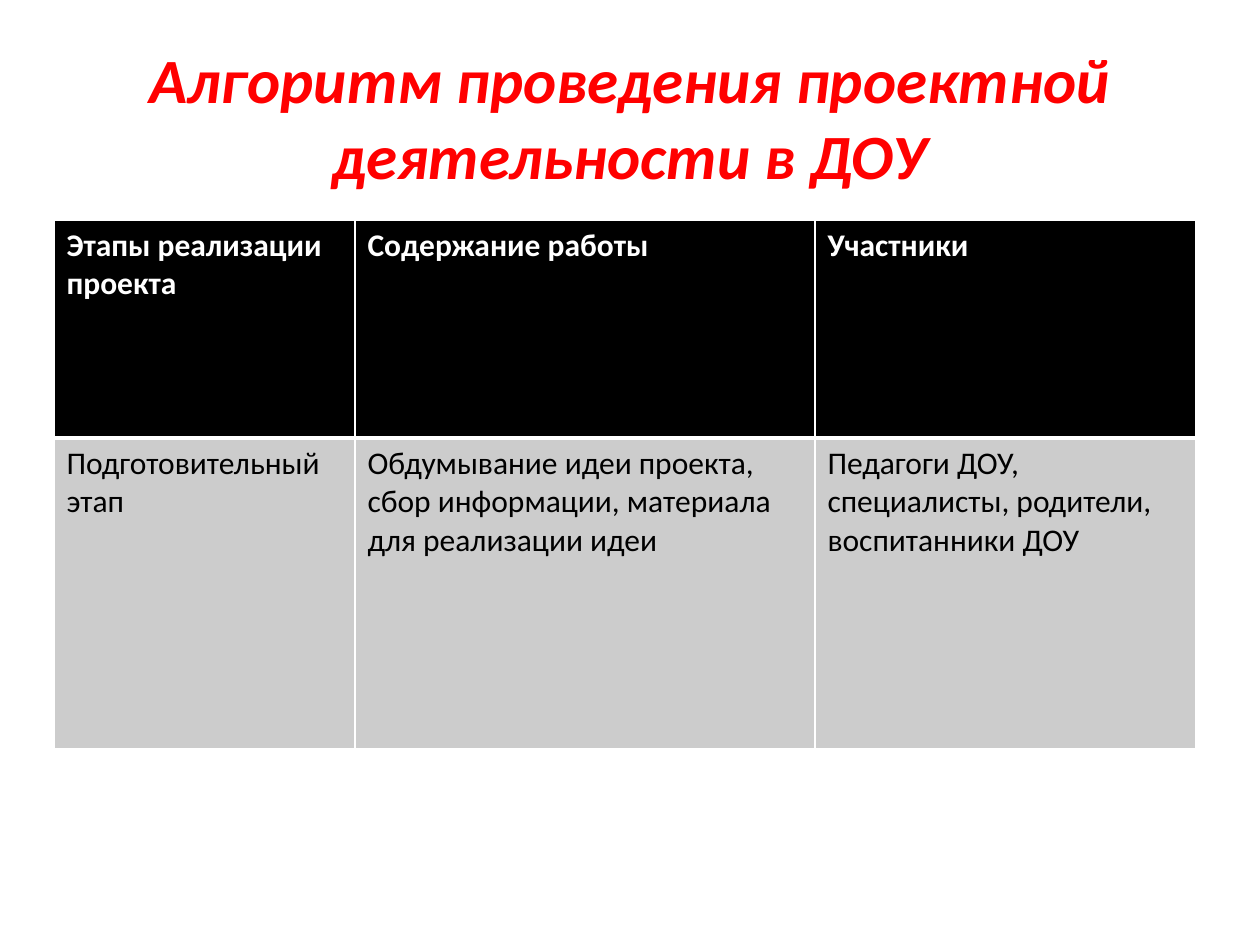
from typing import NamedTuple

from pptx import Presentation
from pptx import util as u
from pptx.dml.color import RGBColor
from pptx.enum import text
from pptx.oxml import parse_xml
from pptx.oxml.ns import nsdecls

PX = u.Inches(1) // 126
FONT = "Calibri"
RED = RGBColor(0xFF, 0x00, 0x00)
BLACK = RGBColor(0x00, 0x00, 0x00)
WHITE = RGBColor(0xFF, 0xFF, 0xFF)
GRAY = RGBColor(0xCC, 0xCC, 0xCC)

COLUMN_WIDTHS = (301, 460, 381)
TABLE_LEFT, TABLE_TOP = 54, 220


class Row(NamedTuple):
    height: int
    fill: RGBColor
    color: RGBColor
    bold: bool
    bottom_border: int
    texts: tuple[str, ...]


ROWS = (
    Row(218, BLACK, WHITE, True, 3,
        ("Этапы реализации проекта", "Содержание работы", "Участники")),
    Row(311, GRAY, BLACK, False, 1,
        ("Подготовительный этап",
         "Обдумывание идеи проекта, сбор информации, материала для реализации идеи",
         "Педагоги ДОУ, специалисты, родители, воспитанники ДОУ")),
)


def set_border(cell, side: str, points: int) -> None:
    cell._tc.get_or_add_tcPr().append(parse_xml(
        f'<a:ln{side} {nsdecls("a")} w="{u.Pt(points)}"><a:solidFill>'
        f'<a:srgbClr val="{WHITE}"/></a:solidFill></a:ln{side}>'))


def format_cell(cell, row: Row, content: str, top_border: int) -> None:
    for side, points in zip("LRTB", (1, 1, top_border, row.bottom_border)):
        set_border(cell, side, points)
    cell.fill.solid()
    cell.fill.fore_color.rgb = row.fill
    cell.text = content
    font = cell.text_frame.paragraphs[0].font
    font.name, font.size, font.bold = FONT, u.Pt(18), row.bold
    font.color.rgb = row.color


def add_title(slide) -> None:
    title = slide.shapes.title
    title.left, title.top, title.width, title.height = (
        length * PX for length in (63, 38, 1134, 157))
    frame = title.text_frame
    frame.text = "Алгоритм проведения проектной деятельности в ДОУ"
    frame.word_wrap = True
    frame.vertical_anchor = text.MSO_ANCHOR.MIDDLE
    paragraph = frame.paragraphs[0]
    paragraph.alignment = text.PP_ALIGN.CENTER
    font = paragraph.font
    font.name, font.size, font.bold, font.italic = FONT, u.Pt(36), True, True
    font.color.rgb = RED


def add_stage_table(slide) -> None:
    table = slide.shapes.add_table(
        len(ROWS), len(COLUMN_WIDTHS), TABLE_LEFT * PX, TABLE_TOP * PX,
        sum(COLUMN_WIDTHS) * PX, sum(row.height for row in ROWS) * PX).table
    table.horz_banding = False
    for column, width in zip(table.columns, COLUMN_WIDTHS):
        column.width = width * PX
    top_border = 1
    for index, row in enumerate(ROWS):
        table.rows[index].height = row.height * PX
        for cell, content in zip(table.rows[index].cells, row.texts):
            format_cell(cell, row, content, top_border)
        top_border = row.bottom_border


def main() -> None:
    presentation = Presentation()
    presentation.slide_width = 1260 * PX
    presentation.slide_height = 945 * PX
    slide = presentation.slides.add_slide(presentation.slide_layouts[5])
    add_title(slide)
    add_stage_table(slide)
    presentation.save("out.pptx")


if __name__ == "__main__":
    main()
